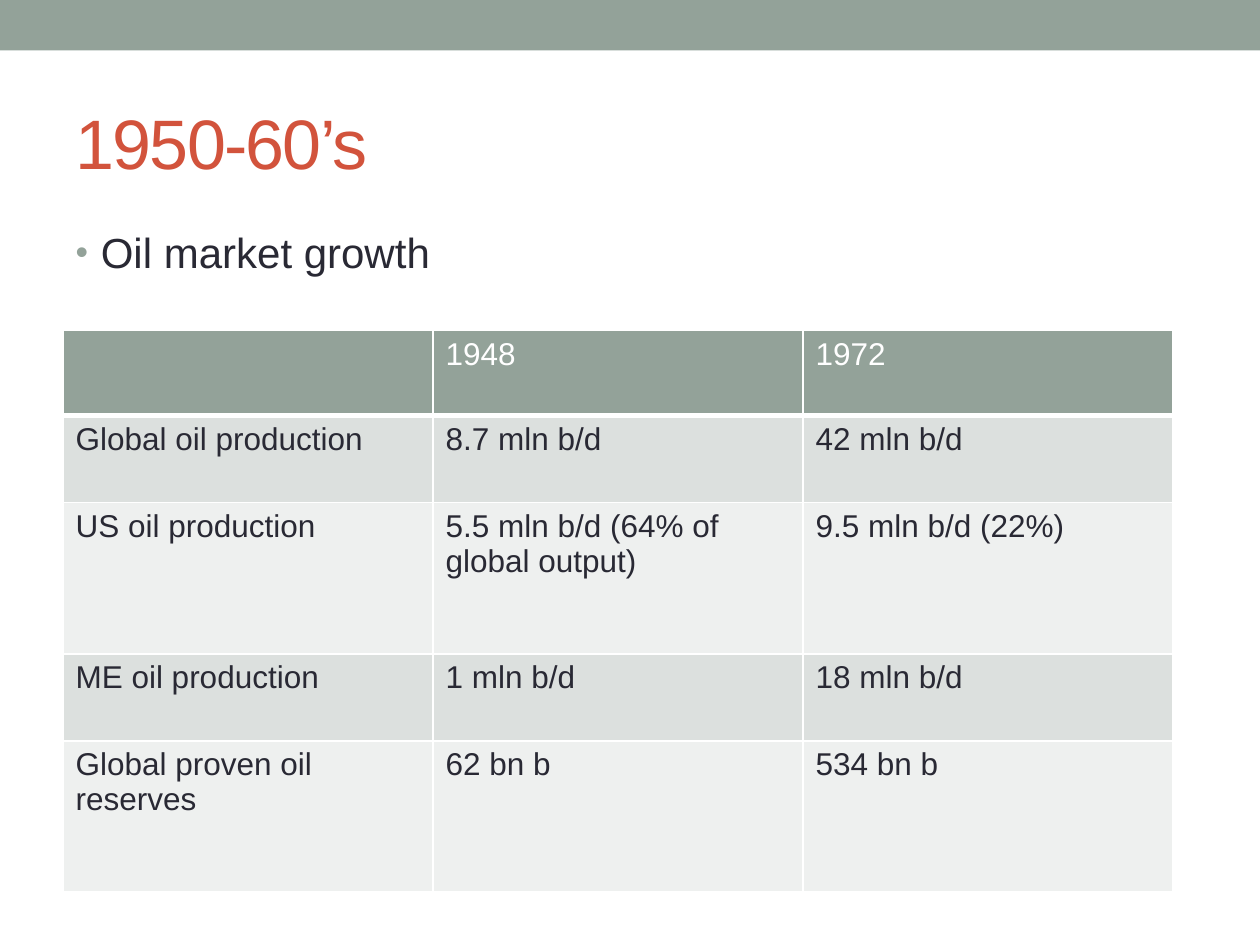
from lxml import etree
from pptx import Presentation
from pptx import util as u
from pptx.dml.color import RGBColor
from pptx.enum import shapes, text
from pptx.oxml.ns import qn

PX = 9144  # EMU in one px, 100 px to the inch
COLORS = {
    "sage": "93A299", "rust": "D2533C", "ink": "292934",
    "white": "FFFFFF", "band": "DCE0DE", "pale": "EEF0EF",
}
ROWS = [
    ["", "1948", "1972"],
    ["Global oil production", "8.7 mln b/d", "42 mln b/d"],
    ["US oil production", "5.5 mln b/d (64% of global output)", "9.5 mln b/d (22%)"],
    ["ME oil production", "1 mln b/d", "18 mln b/d"],
    ["Global proven oil reserves", "62 bn b", "534 bn b"],
]
HEIGHTS = [68, 69, 120, 69, 120]


def px(*sizes):
    return [u.Emu(size * PX) for size in sizes]


def rgb(name):
    return RGBColor.from_string(COLORS[name])


def sub(node, tag, **attrs):
    return etree.SubElement(node, qn(tag), {key: str(val) for key, val in attrs.items()})


def write(frame, words, size=18, color="ink", font="Arial", space=0, bullet=None):
    """Put one left-aligned paragraph into a text frame."""
    para = frame.paragraphs[0]
    props = para._p.get_or_add_pPr()
    if bullet:
        props.set("marL", str(20 * PX))
        props.set("indent", str(-20 * PX))
        sub(sub(props, "a:buClr"), "a:srgbClr", val=COLORS[bullet])
        sub(props, "a:buSzPct", val=85000)
        sub(props, "a:buFont", typeface=font)
        sub(props, "a:buChar", char="•")
    para.alignment = text.PP_ALIGN.LEFT
    para.space_before = u.Pt(0)
    if not words:
        para.font.size = u.Pt(size)
        return
    run = para.add_run()
    run.text = words
    run.font.size, run.font.name = u.Pt(size), font
    run.font.bold = False
    run.font.color.rgb = rgb(color)
    if space:
        run._r.get_or_add_rPr().set("spc", str(space * 100))


class Deck:
    def __init__(self, wide, high):
        self.prs = Presentation()
        self.prs.slide_width, self.prs.slide_height = px(wide, high)
        self.slide = self.prs.slides.add_slide(self.prs.slide_layouts[1])

    def bar(self, box, color):
        shape = self.slide.shapes.add_shape(shapes.MSO_SHAPE.RECTANGLE, *px(*box))
        shape.shadow.inherit = False
        shape.fill.solid()
        shape.fill.fore_color.rgb = rgb(color)
        shape.line.fill.background()

    def holder(self, index, box, words, anchor, **style):
        shape = self.slide.placeholders[index]
        shape.left, shape.top, shape.width, shape.height = px(*box)
        shape.text_frame.vertical_anchor = anchor
        write(shape.text_frame, words, **style)

    def border(self, cell, base):
        props = cell._tc.get_or_add_tcPr()
        for spot, side in enumerate("LRTB"):
            width = u.Pt(base if side == "B" else 1)
            line = etree.Element(qn(f"a:ln{side}"), w=str(width))
            sub(sub(line, "a:solidFill"), "a:srgbClr", val=COLORS["white"])
            props.insert(spot, line)

    def table(self, box, rows, heights):
        grid = self.slide.shapes.add_table(len(rows), len(rows[0]), *px(*box)).table
        for col in grid.columns:
            col.width = u.Emu(box[2] * PX // len(rows[0]))
        for r, (row, high) in enumerate(zip(rows, heights)):
            grid.rows[r].height = px(high)[0]
            fill = "sage" if r == 0 else ("pale", "band")[r % 2]
            for c, words in enumerate(row):
                cell = grid.cell(r, c)
                write(cell.text_frame, words, color="ink" if r else "white")
                cell.fill.solid()
                cell.fill.fore_color.rgb = rgb(fill)
                self.border(cell, 1 if r else 3)


def main():
    deck = Deck(1000, 750)
    # Top band
    deck.bar((0, 0, 1000, 40), "sage")
    # Title and bullet
    deck.holder(0, (50, 58, 900, 108), "1950-60’s", text.MSO_ANCHOR.MIDDLE,
                size=40, color="rust", space=-1)
    deck.holder(1, (50, 175, 900, 533), "Oil market growth", text.MSO_ANCHOR.TOP,
                size=24, bullet="sage")
    # Oil figures
    deck.table((50, 262, 881, sum(HEIGHTS)), ROWS, HEIGHTS)
    deck.prs.save("out.pptx")


if __name__ == "__main__":
    main()
